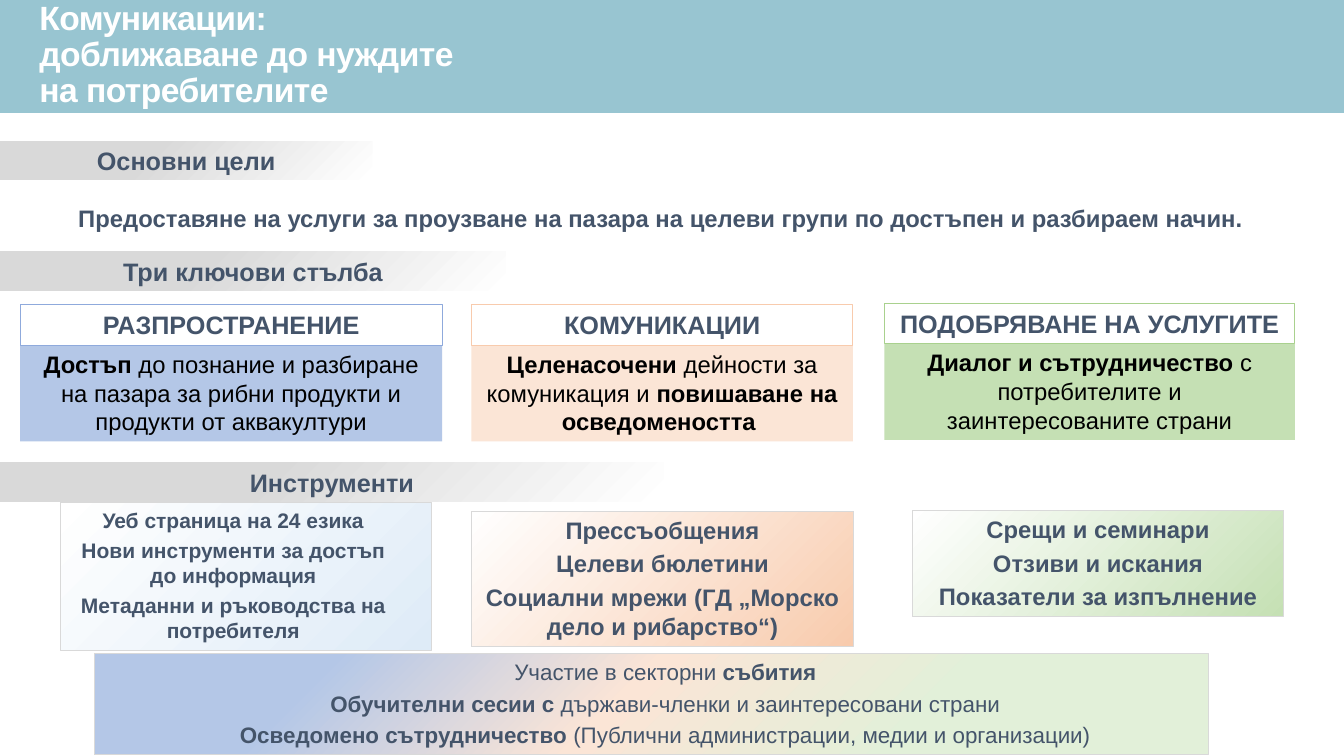
from copy import deepcopy
from dataclasses import dataclass

from pptx import Presentation
from pptx.dml.color import RGBColor
from pptx.enum.shapes import MSO_SHAPE
from pptx.enum.text import MSO_ANCHOR, MSO_AUTO_SIZE, PP_ALIGN
from pptx.oxml.ns import qn
from pptx.util import Inches, Pt


@dataclass(frozen=True)
class Theme:
    font: str = "Arial"
    title_size: int = 24
    heading_size: int = 18
    body_size: int = 17
    events_size: int = 16
    small_size: int = 15
    white: str = "FFFFFF"
    black: str = "000000"
    ink: str = "44546A"
    banner: str = "98C5D1"
    grey: str = "D9D9D9"
    blue: str = "B4C7E7"
    blue_line: str = "8FAADC"
    blue_pale: str = "DEEBF7"
    orange: str = "F8CBAD"
    orange_pale: str = "FBE5D6"
    green: str = "C5E0B4"
    green_line: str = "A9D18E"
    green_pale: str = "E2F0D9"
    # left, top, right and bottom insets in points
    normal: tuple = (7.2, 3.6, 7.2, 3.6)
    roomy: tuple = (8.64, 4.32, 8.64, 4.32)
    tight: tuple = (3, 3, 3, 3)
    web: tuple = (7.2, 3.6, 25.2, 3.6)
    events: tuple = (22.3, 3, 3, 3)


class SlideBuilder:
    """Places elements on a grid of 100 columns by 100 rows."""

    def __init__(self, prs, theme):
        self.theme = theme
        self.slide = prs.slides.add_slide(prs.slide_layouts[6])
        self.column, self.row = prs.slide_width / 100, prs.slide_height / 100

    def place(self, left, top, width, height):
        return (round(left * self.column), round(top * self.row),
                round(width * self.column), round(height * self.row))

    def box(self, area, fill=None, line=None):
        """Rectangle; fill is one colour or a list of (percent, colour) stops."""
        box = self.slide.shapes.add_shape(MSO_SHAPE.RECTANGLE, *self.place(*area))
        box.shadow.inherit = False
        if fill is None:
            box.fill.background()
        elif isinstance(fill, str):
            box.fill.solid()
            box.fill.fore_color.rgb = RGBColor.from_string(fill)
        else:
            self.gradient(box, fill)
        if line:
            box.line.color.rgb = RGBColor.from_string(line)
            box.line.width = Pt(0.75)
        else:
            box.line.fill.background()
        return box

    def gradient(self, box, stops):
        box.fill.gradient()
        box.fill.gradient_angle = 135
        stop_list = next(box._element.spPr.iter(qn("a:gsLst")))
        for _ in stops[2:]:
            stop_list.append(deepcopy(stop_list[0]))
        for stop, (percent, color) in zip(box.fill.gradient_stops, stops):
            stop.position = percent / 100
            stop.color.rgb = RGBColor.from_string(color)

    def add_text(self, box, lines, size, color=None, insets=None, bold=True,
                 anchor=MSO_ANCHOR.TOP, align=PP_ALIGN.CENTER, grow=True, gap=0.22):
        """Fill a box with paragraphs; parts between ** switch bold."""
        frame = box.text_frame
        frame.word_wrap = True
        frame.auto_size = (MSO_AUTO_SIZE.SHAPE_TO_FIT_TEXT if grow
                           else MSO_AUTO_SIZE.NONE)
        frame.vertical_anchor = anchor
        (frame.margin_left, frame.margin_top,
         frame.margin_right, frame.margin_bottom) = map(Pt, insets or self.theme.normal)
        for index, line in enumerate(lines):
            paragraph = frame.add_paragraph() if index else frame.paragraphs[0]
            paragraph.alignment = align
            if index and gap:
                paragraph.space_before = Pt(round(size * gap, 1))
            for part, words in enumerate(line.split("**")):
                if words:
                    run = paragraph.add_run()
                    run.text = words
                    run.font.name = self.theme.font
                    run.font.size = Pt(size)
                    run.font.bold = bold != bool(part % 2)
                    run.font.color.rgb = RGBColor.from_string(color or self.theme.ink)

    def title(self, area, lines):
        title = self.slide.shapes.add_textbox(*self.place(*area))
        self.add_text(title, lines, self.theme.title_size, self.theme.white,
                      anchor=MSO_ANCHOR.BOTTOM, align=PP_ALIGN.LEFT, grow=False, gap=0)
        for paragraph in title.text_frame.paragraphs:
            paragraph.line_spacing = 0.9
            for run in paragraph.runs:
                run.font._element.set("spc", "-40")

    def section(self, top, width, label):
        stops = [(0, self.theme.white), (61, self.theme.grey)]
        self.add_text(self.box((0, top, width, 5.1), stops), [label],
                      self.theme.heading_size, insets=self.theme.tight)

    def pillar(self, left, top, width, heading, body, fill, line):
        statement = self.box((left, top + 5.3, width, 12.8), fill)
        self.add_text(statement, [body], self.theme.body_size, self.theme.black, bold=False)
        header = self.box((left, top, width, 5.35), self.theme.white, line)
        self.add_text(header, [heading], self.theme.heading_size)

    def tools(self, area, tint, lines, size, insets):
        panel = self.box(area, [(0, tint), (100, self.theme.white)], self.theme.grey)
        self.add_text(panel, lines, size, insets=insets)


def main():
    prs = Presentation()
    prs.slide_width, prs.slide_height = Inches(13.33), Inches(7.5)
    theme = Theme()
    page = SlideBuilder(prs, theme)

    page.box((0, 0, 100, 14.93), theme.banner)
    page.title((2.2, 3.6, 35.5, 11.6),
               ["Комуникации:", "доближаване до нуждите на потребителите"])
    goal = page.box((2.85, 23.87, 92.65, 10), theme.white)
    page.add_text(goal, ["Предоставяне на услуги за проузване на пазара на целеви "
                         "групи по достъпен и разбираем начин."],
                  theme.body_size, insets=theme.roomy, anchor=MSO_ANCHOR.MIDDLE,
                  grow=False)

    for top, width, label in [(18.67, 27.7, "Основни цели"),
                              (33.3, 37.65, "Три ключови стълба"),
                              (61.2, 49.4, "Инструменти")]:
        page.section(top, width, label)

    page.pillar(1.5, 40.3, 31.4, "РАЗПРОСТРАНЕНИЕ",
                "**Достъп **до познание и разбиране на пазара за рибни продукти "
                "и продукти от аквакултури", theme.blue, theme.blue_line)
    page.pillar(35.07, 40.3, 28.4, "КОМУНИКАЦИИ",
                "**Целенасочени **дейности за комуникация и **повишаване на "
                "осведомеността **", theme.orange_pale, theme.orange)
    page.pillar(65.8, 40.1, 30.55, "ПОДОБРЯВАНЕ НА УСЛУГИТЕ",
                "**Диалог и сътрудничество **с потребителите и "
                "заинтересованите страни", theme.green, theme.green_line)

    page.tools((4.5, 66.5, 27.6, 19.5), theme.blue_pale,
               ["Уеб страница на 24 езика",
                "Нови инструменти за достъп до информация",
                "Метаданни и ръководства на потребителя"],
               theme.small_size, theme.web)
    page.tools((35.1, 67.6, 28.4, 17.9), theme.orange,
               ["Прессъобщения", "Целеви бюлетини",
                "Социални мрежи (ГД „Mорско дело и рибарство“)"],
               theme.body_size, theme.tight)
    page.tools((67.9, 67.5, 27.6, 14), theme.green,
               ["Срещи и семинари", "Отзиви и искания", "Показатели за изпълнение"],
               theme.body_size, theme.tight)

    events = page.box((7.05, 86.5, 82.9, 13.3),
                      [(26, theme.green_pale), (53, theme.orange_pale), (80, theme.blue)],
                      theme.grey)
    page.add_text(events, ["Участие в секторни **събития**",
                           "**Обучителни сесии с **държави-членки и заинтересовани страни",
                           "**Осведомено сътрудничество **(Публични администрации, "
                           "медии и организации)"],
                  theme.events_size, insets=theme.events, bold=False)
    prs.save("out.pptx")


if __name__ == "__main__":
    main()
